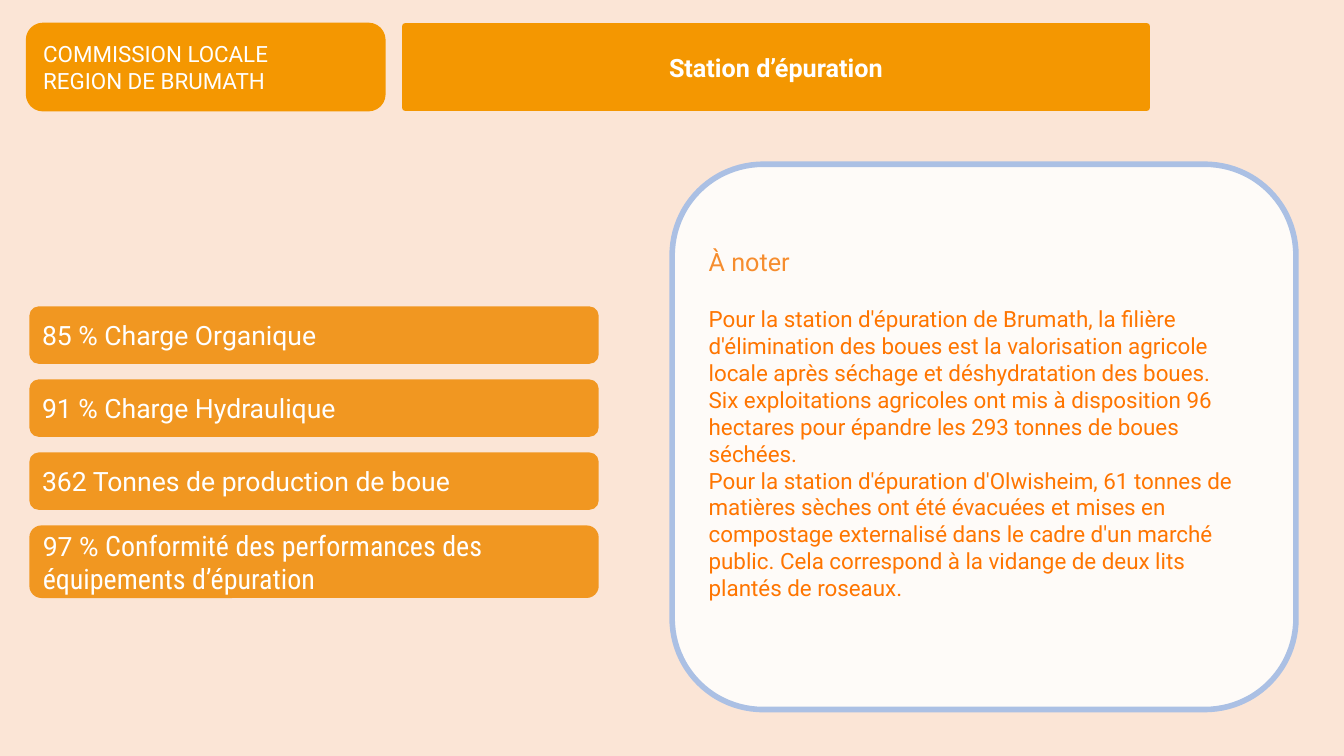
"""Build the sewage plant slide of the Brumath local commission."""
from lxml.etree import SubElement
from pptx import Presentation
from pptx.dml.color import RGBColor
from pptx.enum.shapes import MSO_SHAPE
from pptx.enum.text import MSO_ANCHOR, MSO_AUTO_SIZE, PP_ALIGN
from pptx.oxml.ns import qn
from pptx.util import Cm, Pt

HUES = {
    "page": "FBE5D6", "head": "F49701", "bar": "F08A02", "white": "FFFFFF",
    "edge": "ABC0E4", "note": "F68D2E", "body": "FF7500",
}
BARS = ["85 % Charge Organique", "91 % Charge Hydraulique",
        "362 Tonnes de production de boue"]
NOTES = [
    "Pour la station d'épuration de Brumath, la filière d'élimination des boues "
    "est la valorisation agricole locale après séchage et déshydratation des boues.",
    "Six exploitations agricoles ont mis à disposition 96 hectares pour épandre "
    "les 293 tonnes de boues séchées.",
    "Pour la station d'épuration d'Olwisheim, 61 tonnes de matières sèches ont été "
    "évacuées et mises en compostage externalisé dans le cadre d'un marché public. "
    "Cela correspond à la vidange de deux lits plantés de roseaux.",
]


def hue(name):
    return RGBColor.from_string(HUES[name])


def paint(shape, fill, edge=None, weight=0, alpha=None):
    shape.fill.solid()
    shape.fill.fore_color.rgb = hue(fill)
    if alpha:
        tint = shape.element.spPr.find(qn("a:solidFill"))[0]
        SubElement(tint, qn("a:alpha"), val=str(alpha * 1000))
    if edge:
        shape.line.color.rgb = hue(edge)
        shape.line.width = Pt(weight)
    else:
        shape.line.fill.background()


def setup(shape):
    frame = shape.text_frame
    frame.word_wrap = True
    frame.auto_size = MSO_AUTO_SIZE.NONE
    frame.vertical_anchor = MSO_ANCHOR.MIDDLE


def panel(slide, left, top, width, height, fill, **look):
    shape = slide.shapes.add_shape(MSO_SHAPE.ROUNDED_RECTANGLE, Cm(left), Cm(top),
                                   Cm(width), Cm(height))
    shape.shadow.inherit = False
    paint(shape, fill, **look)
    setup(shape)
    return shape


def write(shape, text, size=16, font="Roboto", color="white", bold=False,
          align=PP_ALIGN.LEFT, after=0, join=False):
    frame = shape.text_frame
    para = frame.paragraphs[-1]
    if para.runs and not join:
        para = frame.add_paragraph()
    para.alignment = align
    para.space_after = Pt(after)
    run = para.add_run()
    run.text = text
    run.font.size = Pt(size)
    run.font.name = font
    run.font.bold = bold
    run.font.color.rgb = hue(color)


def title(slide, text, left, top, width, height):
    shape = slide.shapes.title
    shape.left, shape.top = Cm(left), Cm(top)
    shape.width, shape.height = Cm(width), Cm(height)
    form = SubElement(shape.element.spPr, qn("a:prstGeom"), prst="roundRect")
    SubElement(form, qn("a:avLst"))
    paint(shape, "head", edge="head", weight=5)
    setup(shape)
    write(shape, text, size=18, bold=True, align=PP_ALIGN.CENTER)


def bars(slide):
    left, top, width, step = 0.74, 7.72, 14.35, 1.84
    for row, text in enumerate(BARS):
        bar = panel(slide, left, top + row * step, width, 1.45, "bar", alpha=85)
        write(bar, text, size=19)
    last = panel(slide, left, top + len(BARS) * step, width, 1.83, "bar", alpha=85)
    write(last, "97 % ", size=19)
    slim = {"size": 20, "font": "Roboto Condensed"}
    write(last, "Conformité des performances des", join=True, **slim)
    write(last, "équipements d’épuration", **slim)


def notes(slide):
    box = panel(slide, 16.94, 4.14, 15.72, 13.74, "white", edge="edge", weight=4,
                alpha=85)
    box.text_frame.margin_bottom = Cm(0.8)
    write(box, "À noter", size=18, color="note", align=PP_ALIGN.JUSTIFY, after=21)
    for text in NOTES:
        write(box, text, color="body")


def main():
    deck = Presentation()
    deck.slide_width, deck.slide_height = Cm(33.87), Cm(19.05)
    slide = deck.slides.add_slide(deck.slide_layouts[5])
    slide.background.fill.solid()
    slide.background.fill.fore_color.rgb = hue("page")
    title(slide, "Station d’épuration", 10.21, 0.66, 18.69, 2.06)
    place = panel(slide, 0.74, 0.66, 8.89, 2.06, "head", edge="head", weight=5)
    for text in ("COMMISSION LOCALE", "REGION DE BRUMATH"):
        write(place, text)
    bars(slide)
    notes(slide)
    deck.save("out.pptx")


if __name__ == "__main__":
    main()
